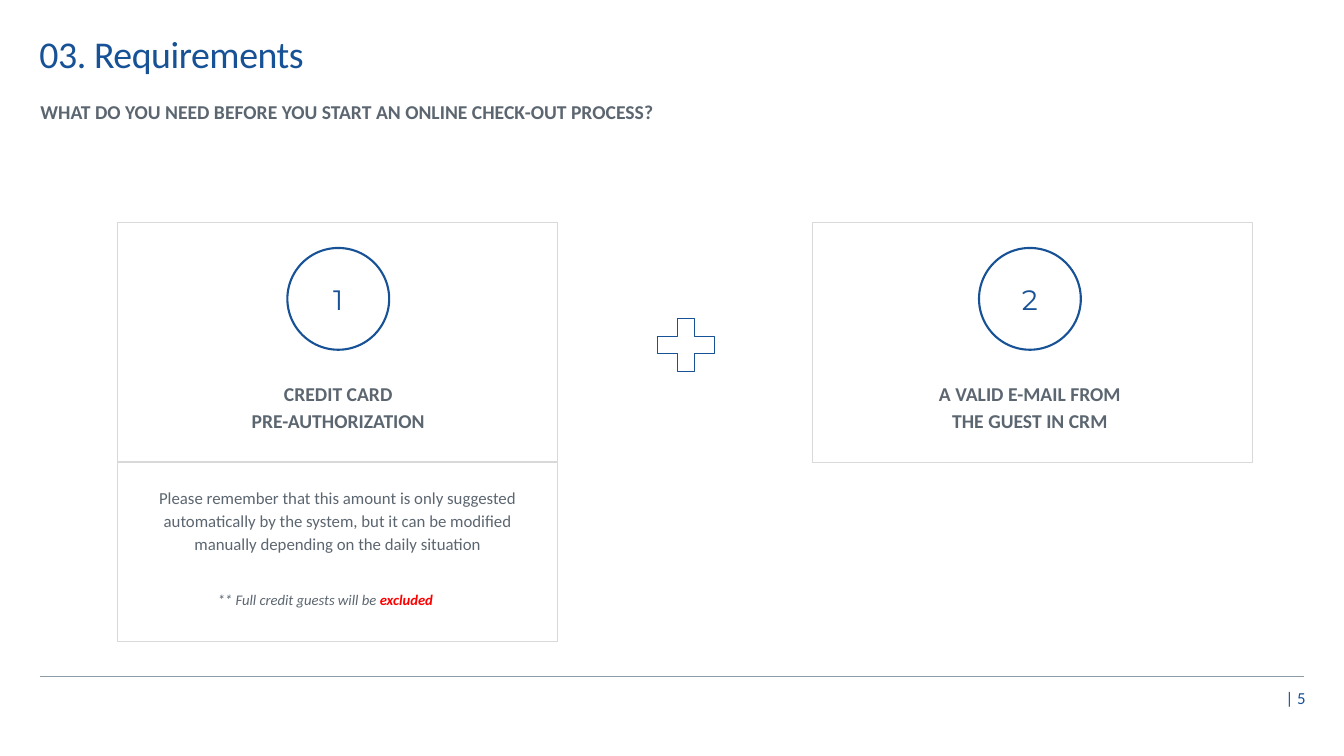
from pptx import Presentation
from pptx.dml.color import RGBColor
from pptx.enum import shapes as sh, text as tx
from pptx.oxml import parse_xml
from pptx.oxml.ns import nsdecls
from pptx.util import Inches, Pt

HUES = {"blue": "175196", "gray": "5C6670", "edge": "D9D9D9", "rule": "8C9BA8", "red": "FF0000"}
HEAD = {"size": Pt(14), "bold": True}
NOTE = {"size": Pt(10.5), "italic": True}
MID, LEFT, RIGHT, JUST = (tx.PP_ALIGN.CENTER, tx.PP_ALIGN.LEFT,
                          tx.PP_ALIGN.RIGHT, tx.PP_ALIGN.JUSTIFY)


def hue(name):
    return RGBColor.from_string(HUES[name])


def style(font, look):
    """Set font attributes; 'hue' is a colour name."""
    look = {"name": "Calibri", "hue": "gray", **look}
    font.color.rgb = hue(look.pop("hue"))
    for key, val in look.items():
        setattr(font, key, val)


def write(frame, lines, align, gap=None):
    """Fill a frame with lines, each a list of (words, look) runs."""
    for i, runs in enumerate(lines):
        para = frame.add_paragraph() if i else frame.paragraphs[0]
        para.alignment = align
        if gap:
            para.line_spacing = gap
        for words, look in runs:
            run = para.add_run()
            run.text = words
            style(run.font, look)


def label(slide, box, lines, align, gap=1.14):
    area = slide.shapes.add_textbox(*map(Inches, box))
    frame = area.text_frame
    frame.word_wrap = True
    for side in ("left", "top", "right", "bottom"):
        setattr(frame, f"margin_{side}", 0)
    write(frame, lines, align, gap)
    return area


def outline(slide, kind, box, tint, width=0.75):
    """Add an unfilled shape."""
    item = slide.shapes.add_shape(kind, *map(Inches, box))
    item.shadow.inherit = False
    item.fill.background()
    item.line.color.rgb = hue(tint)
    item.line.width = Pt(width)
    return item


def header(slide, x, y):
    look = {"size": Pt(27), "hue": "blue"}
    title = label(slide, (x, y, 5.65, 0.92), [[("03. Requirements", look)]], LEFT, None)
    title.text_frame.paragraphs[0].runs[0].font._element.set("spc", "-30")
    ask = "WHAT DO YOU NEED BEFORE YOU START AN ONLINE CHECK-OUT PROCESS?"
    label(slide, (x + 0.01, y + 0.66, 7.49, 0.52), [[(ask, HEAD)]], JUST)


def card(slide, x, y, inset, digit, lines):
    """Draw a numbered card whose circle starts at the given inset."""
    outline(slide, sh.MSO_SHAPE.RECTANGLE, (x, y, 4.36, 2.38), "edge")
    ring = outline(slide, sh.MSO_SHAPE.OVAL, (x + inset, y + 0.25, 1.01, 1.01), "blue", 1.5)
    ring.text_frame.vertical_anchor = tx.MSO_ANCHOR.MIDDLE
    look = {"name": "Montserrat", "size": Pt(20), "hue": "blue"}
    write(ring.text_frame, [[(digit, look)]], MID)
    label(slide, (x + inset - 0.4, y + 1.55, 1.81, 0.52),
          [[(line, HEAD)] for line in lines], MID)


def remark(slide, x, y):
    outline(slide, sh.MSO_SHAPE.RECTANGLE, (x, y, 4.36, 1.78), "edge")
    words = ("Please remember that this amount is only suggested automatically by the "
             "system, but it can be modified manually depending on the daily situation")
    label(slide, (x + 0.25, y + 0.23, 3.86, 0.8), [[(words, {"size": Pt(12)})]], MID)
    label(slide, (x + 0.99, y + 1.26, 2.76, 0.41),
          [[("** Full credit guests will be ", NOTE),
            ("excluded", {**NOTE, "bold": True, "hue": "red"})]], JUST)


def footer(slide, x, y, w):
    rule = slide.shapes.add_connector(sh.MSO_CONNECTOR.STRAIGHT,
                                      *map(Inches, (x, y, x + w, y)))
    rule.line.color.rgb = hue("rule")
    rule.line.width = Pt(1)
    rule._element.spPr.append(parse_xml(f"<a:effectLst {nsdecls('a')}/>"))
    label(slide, (x + w - 2.11, y + 0.11, 2.13, 0.32),
          [[("| 5", {"size": Pt(12), "hue": "blue"})]], RIGHT, None)


def main():
    deck = Presentation()
    deck.slide_width, deck.slide_height = Inches(13.33), Inches(7.5)
    slide = deck.slides.add_slide(deck.slide_layouts[6])
    footer(slide, 0.4, 6.71, 12.53)
    header(slide, 0.39, 0.3)
    card(slide, 1.17, 2.21, 1.68, "1", ["CREDIT CARD", "PRE-AUTHORIZATION"])
    card(slide, 8.06, 2.21, 1.65, "2", ["A VALID E-MAIL FROM THE GUEST IN CRM"])
    outline(slide, sh.MSO_SHAPE.MATH_PLUS, (6.42, 3.07, 0.77, 0.71), "blue")
    remark(slide, 1.17, 4.58)
    deck.save("out.pptx")


if __name__ == "__main__":
    main()
